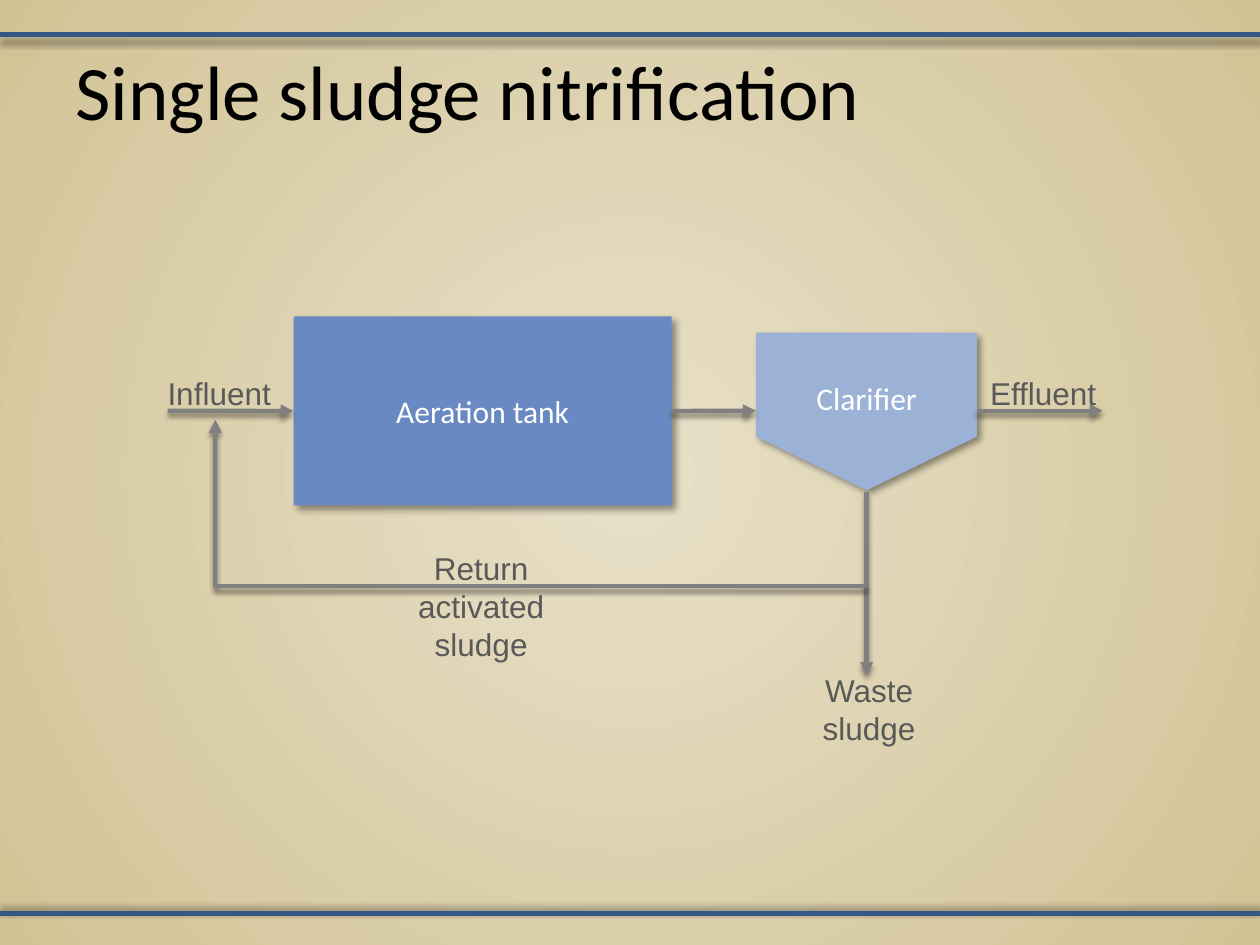
from dataclasses import dataclass

from lxml import etree
from pptx import Presentation
from pptx import util as u
from pptx.dml.color import RGBColor
from pptx.enum import shapes, text
from pptx.oxml.ns import qn


@dataclass(frozen=True)
class Theme:
    centre: str = "E8E0C8"
    edge: str = "D2C396"
    rule: str = "355784"
    tank: str = "6989C2"
    clarifier: str = "9BB1D6"
    flow: str = "808080"
    title: str = "000000"
    label: str = "595959"
    on_fill: str = "FFFFFF"
    title_size: int = 44
    text_size: int = 18
    rule_width: float = 3
    flow_width: float = 2.5


theme = Theme()
color = RGBColor.from_string


def add_shadow(shape, alpha, blur, distance, direction):
    """Give a shape or connector an outer shadow (points, percent, degrees)."""
    effects = etree.SubElement(shape._element.spPr, qn("a:effectLst"))
    shadow = etree.SubElement(
        effects, qn("a:outerShdw"), blurRad=str(u.Pt(blur)), dist=str(u.Pt(distance)),
        dir=str(direction * 60000), algn="ctr", rotWithShape="0")
    black = etree.SubElement(shadow, qn("a:srgbClr"), val="000000")
    etree.SubElement(black, qn("a:alpha"), val=str(alpha * 1000))


def write(shape, words, name, size, fill, align):
    """Fill a shape with one uniformly formatted paragraph."""
    shape.text_frame.text = words
    paragraph = shape.text_frame.paragraphs[0]
    paragraph.alignment = align
    paragraph.font.name, paragraph.font.size = name, u.Pt(size)
    paragraph.font.color.rgb = color(fill)


presentation = Presentation()
presentation.slide_width, presentation.slide_height = u.Cm(25.4), u.Cm(19.05)
slide = presentation.slides.add_slide(presentation.slide_layouts[5])

# Background: radial gradient
background = slide.background.fill
background.gradient()
for stop, position, shade in zip(background.gradient_stops, (0, 1), (theme.centre, theme.edge)):
    stop.position, stop.color.rgb = position, color(shade)
gradient = slide._element.find(".//" + qn("a:gradFill"))
linear = gradient.find(qn("a:lin"))
circle = etree.Element(qn("a:path"), path="circle")
etree.SubElement(circle, qn("a:fillToRect"), l="50000", t="50000", r="50000", b="50000")
gradient.replace(linear, circle)

# Rules at the top and bottom
for y, direction in ((0.69, 90), (18.42, 270)):
    rule = slide.shapes.add_connector(
        shapes.MSO_CONNECTOR.STRAIGHT, 0, u.Cm(y), presentation.slide_width, u.Cm(y))
    rule.line.color.rgb, rule.line.width = color(theme.rule), u.Pt(theme.rule_width)
    add_shadow(rule, 40, 4, 3, direction)

# Title
title = slide.shapes.title
title.left, title.top, title.width, title.height = u.Cm(1.27), u.Cm(0.76), u.Cm(22.86), u.Cm(3.18)
title.text_frame.vertical_anchor = text.MSO_ANCHOR.TOP
write(title, "Single sludge nitrification", "Calibri", theme.title_size, theme.title,
      text.PP_ALIGN.LEFT)

# Process units
units = {}
for words, kind, fill, left, top, width, height in (
    ("Aeration tank", shapes.MSO_SHAPE.RECTANGLE, theme.tank, 5.92, 6.38, 7.62, 3.81),
    ("Clarifier", shapes.MSO_SHAPE.PENTAGON, theme.clarifier, 15.88, 6.07, 3.18, 4.45),
):
    unit = slide.shapes.add_shape(kind, u.Cm(left), u.Cm(top), u.Cm(width), u.Cm(height))
    unit.fill.solid()
    unit.fill.fore_color.rgb = color(fill)
    unit.line.fill.background()
    add_shadow(unit, 40, 4, 3, 45)
    unit.text_frame.vertical_anchor = text.MSO_ANCHOR.MIDDLE
    write(unit, words, "Calibri", theme.text_size, theme.on_fill, text.PP_ALIGN.CENTER)
    units[words] = unit

# The clarifier points down while its text stays upright
clarifier = units["Clarifier"]
clarifier.rotation = 90
clarifier.adjustments[0] = 0.34
clarifier.text_frame._txBody.bodyPr.set("vert", "vert270")

# Flow arrows; the elbow is the sludge return
straight, elbow = shapes.MSO_CONNECTOR.STRAIGHT, shapes.MSO_CONNECTOR.ELBOW
flow_y, outlet_x = 8.28, 17.47
flows = {}
for name, kind, x1, y1, x2, y2 in (
    ("influent", straight, 3.38, flow_y, 5.92, flow_y),
    ("transfer", straight, 13.54, flow_y, 15.24, flow_y),
    ("effluent", straight, 19.69, flow_y, 22.23, flow_y),
    ("waste", straight, outlet_x, 9.91, outlet_x, 13.61),
    ("return", elbow, 4.34, 8.46, outlet_x, 11.81),
):
    flow = slide.shapes.add_connector(kind, u.Cm(x1), u.Cm(y1), u.Cm(x2), u.Cm(y2))
    flow.line.color.rgb, flow.line.width = color(theme.flow), u.Pt(theme.flow_width)
    etree.SubElement(flow._element.spPr.find(qn("a:ln")), qn("a:tailEnd"), type="triangle")
    add_shadow(flow, 45, 3, 2.4, 90)
    flows[name] = flow
flows["influent"].end_connect(units["Aeration tank"], 1)
flows["transfer"].begin_connect(units["Aeration tank"], 3)

# A half turn makes the return run left from the outlet, then up
return_properties = flows["return"]._element.spPr
return_properties.find(qn("a:prstGeom")).set("prst", "bentConnector2")
return_properties.find(qn("a:xfrm")).set("rot", str(180 * 60000))

# Labels
right, centre = text.PP_ALIGN.RIGHT, text.PP_ALIGN.CENTER
for words, left, top, width, height, inset, align in (
    ("Influent", 2.97, 7.42, 2.74, 1.02, 0.25, right),
    ("Effluent", 19.61, 7.42, 2.74, 1.02, 0.25, right),
    ("Waste sludge", 16.15, 13.41, 2.74, 1.8, 0.25, centre),
    ("Return activated sludge", 8.28, 10.95, 2.84, 2.57, 0.03, centre),
):
    label = slide.shapes.add_textbox(u.Cm(left), u.Cm(top), u.Cm(width), u.Cm(height))
    frame = label.text_frame
    frame.word_wrap = True
    frame.auto_size = text.MSO_AUTO_SIZE.SHAPE_TO_FIT_TEXT
    frame.margin_left = frame.margin_right = u.Cm(inset)
    write(label, words, "Arial", theme.text_size, theme.label, align)

presentation.save("out.pptx")
